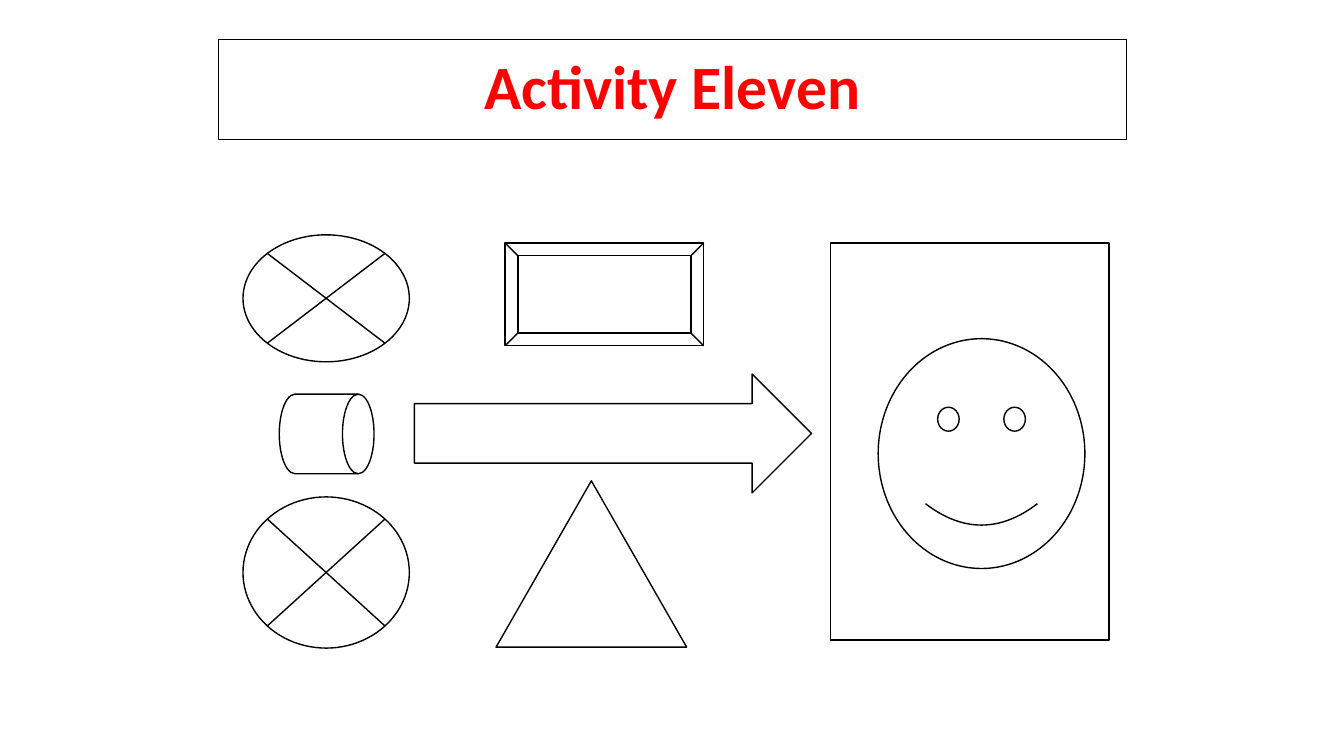
"""Build the Activity Eleven slide of outlined shapes."""
from pptx import Presentation
from pptx.dml.color import RGBColor
from pptx.enum.shapes import MSO_SHAPE as Kind
from pptx.enum.text import MSO_ANCHOR, PP_ALIGN
from pptx.util import Inches, Pt

TITLE = "Activity Eleven"
FONT = "Calibri"
BLACK = RGBColor(0, 0, 0)
RED = RGBColor(255, 0, 0)

BANNER = (2.17, 0.39, 9, 0.99)
FIGURES = [
    (Kind.FLOWCHART_DIRECT_ACCESS_STORAGE, (2.77, 3.91, 0.94, 0.79)),
    (Kind.FLOWCHART_SUMMING_JUNCTION, (2.41, 4.93, 1.65, 1.5)),
    (Kind.FLOWCHART_SUMMING_JUNCTION, (2.41, 2.33, 1.65, 1.26)),
    (Kind.RIGHT_ARROW, (4.11, 3.71, 3.94, 1.18)),
    (Kind.RECTANGLE, (8.24, 2.41, 2.76, 3.94)),
    (Kind.SMILEY_FACE, (8.71, 3.36, 2.05, 2.28)),
    (Kind.BEVEL, (5.01, 2.41, 1.97, 1.02)),
    (Kind.ISOSCELES_TRIANGLE, (4.92, 4.77, 1.89, 1.65)),
]


def outline(slide, kind, box, width=1):
    shape = slide.shapes.add_shape(kind, *map(Inches, box))
    shape.shadow.inherit = False
    shape.fill.background()
    shape.line.color.rgb = BLACK
    shape.line.width = Pt(width)
    return shape


def add_title(slide):
    frame = outline(slide, Kind.RECTANGLE, BANNER, 0.75).text_frame
    frame.text = TITLE
    frame.word_wrap = True
    frame.vertical_anchor = MSO_ANCHOR.MIDDLE
    line = frame.paragraphs[0]
    line.alignment = PP_ALIGN.CENTER
    line.line_spacing = 0.9
    font = line.runs[0].font
    font.name = FONT
    font.size = Pt(44)
    font.bold = True
    font.color.rgb = RED


def main():
    deck = Presentation()
    deck.slide_width = Inches(13.33)
    deck.slide_height = Inches(7.5)
    slide = deck.slides.add_slide(deck.slide_layouts[6])
    add_title(slide)
    for kind, box in FIGURES:
        outline(slide, kind, box)
    deck.save("out.pptx")


if __name__ == "__main__":
    main()
